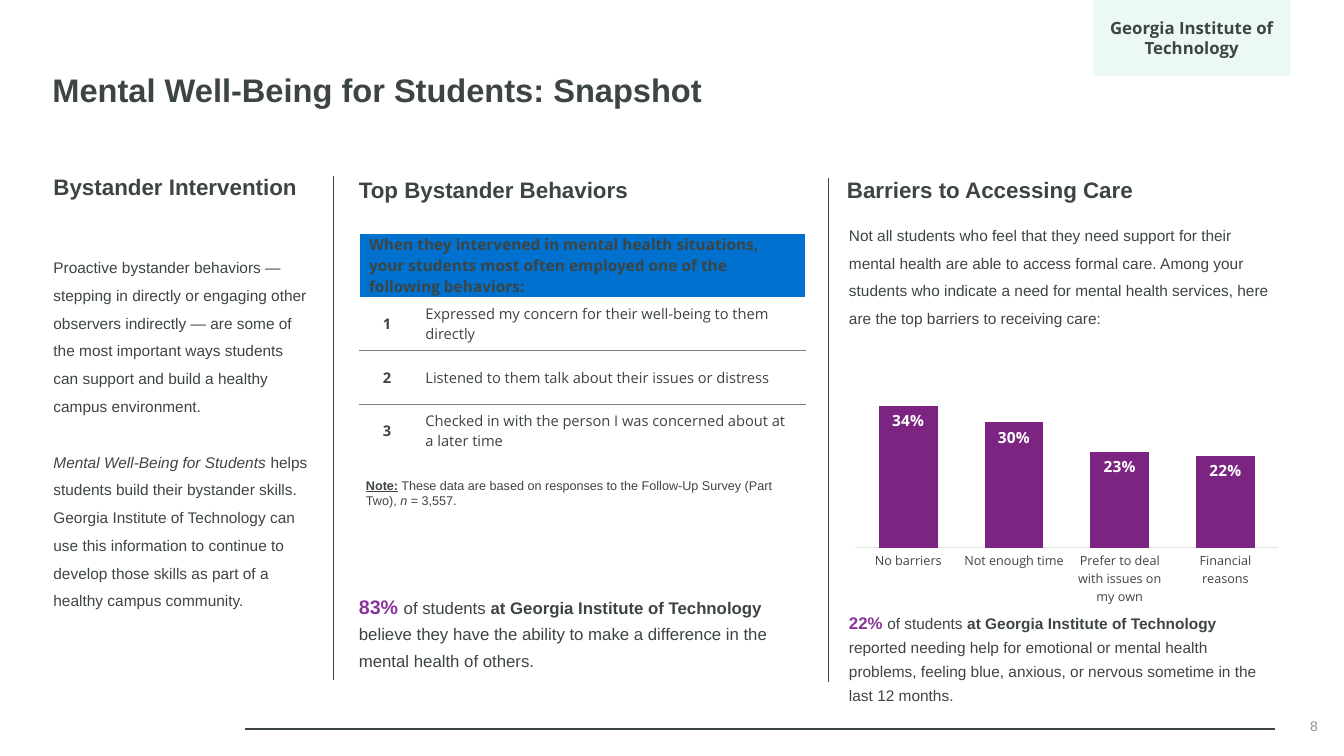
from lxml import etree
from pptx import Presentation
from pptx.chart.data import CategoryChartData
from pptx.dml.color import RGBColor
from pptx.enum.chart import XL_CHART_TYPE, XL_LABEL_POSITION, XL_TICK_MARK
from pptx.enum.shapes import MSO_CONNECTOR, MSO_SHAPE
from pptx.enum.text import MSO_ANCHOR, PP_ALIGN
from pptx.oxml import parse_xml
from pptx.oxml.ns import nsdecls, qn
from pptx.util import Inches, Pt

COLUMN = XL_CHART_TYPE.COLUMN_CLUSTERED
INSIDE = XL_LABEL_POSITION.INSIDE_END
NO_TICK = XL_TICK_MARK.NONE
STRAIGHT = MSO_CONNECTOR.STRAIGHT
RECT = MSO_SHAPE.RECTANGLE
MIDDLE = MSO_ANCHOR.MIDDLE
CENTER, RIGHT = PP_ALIGN.CENTER, PP_ALIGN.RIGHT

INK, GREY, EDGE, WHITE = "3D4542", "929493", "808080", "FFFFFF"
PLUM, VIOLET, BLUE, MINT = "7C2482", "8A349B", "0171D0", "3CC0AF"
PLAIN_STYLE = "{2D5ABB26-0587-4C30-8999-92F81FD0307C}"
SCHOOL = "Georgia Institute of Technology"

BODY = {"name": "Arial", "size": 11, "color": INK, "bold": False}
HEAD = BODY | {"size": 16, "bold": True}
CELL = BODY | {"name": "Open Sans", "size": 10.5}
BOLD = {"bold": True}
SLANT = {"italic": True}


def paint(hex_code):
    return RGBColor.from_string(hex_code)


def style(font, look):
    for key, value in look.items():
        if key == "color":
            font.color.rgb = paint(value)
        else:
            setattr(font, key, Pt(value) if key == "size" else value)


def write(frame, paras, look, **form):
    frame.word_wrap = True
    for i, runs in enumerate(paras):
        para = frame.paragraphs[0] if i == 0 else frame.add_paragraph()
        for key, value in form.items():
            if key != "space_before" or i:
                setattr(para, key, value)
        for text, extra in runs:
            run = para.add_run()
            run.text = text
            style(run.font, look | extra)


def pad(frame, side, top=0):
    for key in ("left", "right"):
        setattr(frame, f"margin_{key}", Inches(side))
    for key in ("top", "bottom"):
        setattr(frame, f"margin_{key}", Inches(top))


def add_text(slide, box, paras, look, **form):
    frame = slide.shapes.add_textbox(*map(Inches, box)).text_frame
    pad(frame, 0)
    write(frame, paras, look, **form)
    return frame


def add_rule(slide, ends, weight):
    rule = slide.shapes.add_connector(STRAIGHT, *map(Inches, ends))
    rule.line.color.rgb = paint(INK)
    rule.line.width = Pt(weight)
    etree.SubElement(rule._element.spPr, qn("a:effectLst"))


def add_stat(slide, box, share, size, claim):
    runs = [(share + " ", {"size": size + (2 if size == 12 else 1),
                           "color": VIOLET, "bold": True}),
            ("of students ", {}), (f"at {SCHOOL} ", BOLD), (claim, {})]
    add_text(slide, box, [runs], BODY | {"size": size}, line_spacing=1.3)


def add_edge(cell, sides, color, width):
    for spot, side in enumerate(sides):
        cell._tc.get_or_add_tcPr().insert(spot, parse_xml(
            f'<a:ln{side} {nsdecls("a")} w="{Pt(width)}"><a:solidFill>'
            f'<a:srgbClr val="{color}"/></a:solidFill></a:ln{side}>'))


def add_table(slide, box, title, deeds):
    frame = slide.shapes.add_table(len(deeds) + 1, 2, *map(Inches, box))
    table = frame.table
    table.first_row = table.horz_banding = False
    table._tbl.tblPr.find(qn("a:tableStyleId")).text = PLAIN_STYLE
    for col, width in zip(table.columns, (0.56, box[2] - 0.56)):
        col.width = Inches(width)
    for i, row in enumerate(table.rows):
        row.height = Inches(0.53 if i else 0.63)

    head = table.cell(0, 0)
    head.merge(table.cell(0, 1))
    head.fill.solid()
    head.fill.fore_color.rgb = paint(BLUE)
    head.vertical_anchor = MIDDLE
    head.margin_top = head.margin_bottom = 0
    write(head.text_frame, [[(title, BOLD)]], CELL | {"size": 11})
    for cell in (head, table.cell(0, 1)):
        add_edge(cell, "LRT", WHITE, 1)

    for i, deed in enumerate(deeds, 1):
        sides = ("T" if i > 1 else "") + ("B" if i < len(deeds) else "")
        for j, text in enumerate((str(i), deed)):
            cell = table.cell(i, j)
            cell.fill.background()
            cell.vertical_anchor = MIDDLE
            write(cell.text_frame, [[(text, {"bold": j == 0})]], CELL,
                  alignment=None if j else CENTER)
            add_edge(cell, sides, EDGE, 0.75)


def add_chart(slide, box, shares):
    data = CategoryChartData(number_format="0%")
    data.categories = list(shares)
    data.add_series("Series 1", list(shares.values()))
    chart = slide.shapes.add_chart(COLUMN, *map(Inches, box), data).chart
    chart.has_title = chart.has_legend = False
    style(chart.font, BODY | {"name": "Lato", "size": 9})
    plot = chart.plots[0]
    plot.gap_width = 80
    plot.vary_by_categories = False
    bars = plot.series[0]
    bars.format.fill.solid()
    bars.format.fill.fore_color.rgb = paint(PLUM)
    labels = bars.data_labels
    labels.show_value = True
    labels.position = INSIDE
    labels.number_format = "0%"
    labels.number_format_is_linked = False
    style(labels.font, CELL | {"size": 11, "color": WHITE, "bold": True})
    base = chart.category_axis
    base.major_tick_mark = base.minor_tick_mark = NO_TICK
    base.format.line.color.rgb = paint("E1E4E4")
    base.format.line.width = Pt(0.75)
    style(base.tick_labels.font, CELL | {"size": 9})
    scale = chart.value_axis
    scale.minimum_scale, scale.maximum_scale = 0, 0.5
    scale.has_major_gridlines = scale.visible = False
    area = chart._chartSpace.chart.plotArea
    for old in area.findall(qn("c:layout")):
        area.remove(old)
    area.insert(0, parse_xml(
        f'<c:layout {nsdecls("c")}><c:manualLayout>'
        '<c:layoutTarget val="inner"/><c:xMode val="edge"/>'
        '<c:yMode val="edge"/><c:x val="0.015"/><c:y val="0"/>'
        '<c:w val="0.98"/><c:h val="0.78"/></c:manualLayout></c:layout>'))


def add_frame(slide):
    add_rule(slide, (12.65, 7.23, 2.43, 7.23), 1.5)
    page = add_text(slide, (10.17, 7, 2.9, 0.4), [[("8", {})]],
                    BODY | {"size": 10, "color": GREY}, alignment=RIGHT)
    page.vertical_anchor = MIDDLE
    title = slide.shapes.title
    for key, value in zip(("left", "top", "width", "height"),
                          (0.42, 0.56, 11.33, 0.7)):
        setattr(title, key, Inches(value))
    title.text_frame.vertical_anchor = MIDDLE
    write(title.text_frame, [[("Mental Well-Being for Students: Snapshot", {})]],
          HEAD | {"size": 23.3}, line_spacing=0.9, alignment=PP_ALIGN.LEFT)
    tag = slide.shapes.add_shape(RECT, *map(Inches, (10.84, 0, 1.96, 0.75)))
    tag.shadow.inherit = False
    tag.line.fill.background()
    tag.fill.solid()
    tag.fill.fore_color.rgb = paint(MINT)
    tint = tag.fill._xPr.find(f'.//{qn("a:srgbClr")}')
    etree.SubElement(tint, qn("a:alpha"), val="10000")
    pad(tag.text_frame, 0.1)
    tag.text_frame.vertical_anchor = MIDDLE
    write(tag.text_frame, [[(SCHOOL, BOLD)]], CELL | {"size": 12},
          alignment=CENTER)


def add_skills(slide, x, y, w):
    add_text(slide, (x, y, w, 0.56), [[("Bystander Intervention", {})]], HEAD)
    add_text(slide, (x, y + 0.75, w, 3.96), [
        [("Proactive bystander behaviors —stepping in directly or engaging "
          "other observers indirectly — are some of the most important ways "
          "students can support and build a healthy campus environment.", {})],
        [("Mental Well-Being for Students", SLANT),
         (f" helps students build their bystander skills. {SCHOOL} can use "
          "this information to continue to develop those skills as part of a "
          "healthy campus community.", {})],
    ], BODY, line_spacing=1.5, space_before=Pt(20))


def add_deeds(slide, x, y, w):
    add_text(slide, (x, y, w, 0.39), [[("Top Bystander Behaviors", {})]], HEAD)
    add_table(slide, (x, y + 0.57, w, 2.22),
              "When they intervened in mental health situations, your students "
              "most often employed one of the following behaviors:",
              ["Expressed my concern for their well-being to them directly",
               "Listened to them talk about their issues or distress",
               "Checked in with the person I was concerned about at a later time"])
    add_text(slide, (x + 0.07, y + 2.99, w - 0.18, 0.3), [[
        ("Note:", {"bold": True, "underline": True}),
        (" These data are based on responses to the Follow-Up Survey "
         "(Part Two), ", {}), ("n", SLANT), (" = 3,557.", {})]],
        BODY | {"size": 9})
    add_stat(slide, (x, y + 4.08, w, 0.77), "83%", 12,
             "believe they have the ability to make a difference in the "
             "mental health of others.")


def add_blocks(slide, x, y, w):
    add_text(slide, (x - 0.02, y, w, 0.39),
             [[("Barriers to Accessing Care", {})]], HEAD)
    add_text(slide, (x, y + 0.4, w, 1.03), [[
        ("Not all students who feel that they need support for their mental "
         "health are able to access formal care. Among your students who "
         "indicate a need for mental health services, here are the top "
         "barriers to receiving care:", {})]], BODY, line_spacing=1.5)
    add_chart(slide, (x, y + 1.61, w + 0.03, 2.66), {
        "No barriers": 0.34, "Not enough time": 0.3,
        "Prefer to deal with issues on my own": 0.23,
        "Financial reasons": 0.22})
    add_stat(slide, (x, y + 4.27, w, 0.77), "22%", 11,
             "reported needing help for emotional or mental health problems, "
             "feeling blue, anxious, or nervous sometime in the last 12 months.")


def main():
    deck = Presentation()
    deck.slide_width, deck.slide_height = Inches(13.33), Inches(7.5)
    slide = deck.slides.add_slide(deck.slide_layouts[5])
    add_frame(slide)
    for x, y in ((3.31, 1.75), (8.22, 1.77)):
        add_rule(slide, (x, y, x, y + 5), 1)
    add_skills(slide, 0.53, 1.72, 2.52)
    add_deeds(slide, 3.56, 1.75, 4.43)
    add_blocks(slide, 8.42, 1.75, 4.25)
    deck.save("out.pptx")


if __name__ == "__main__":
    main()
